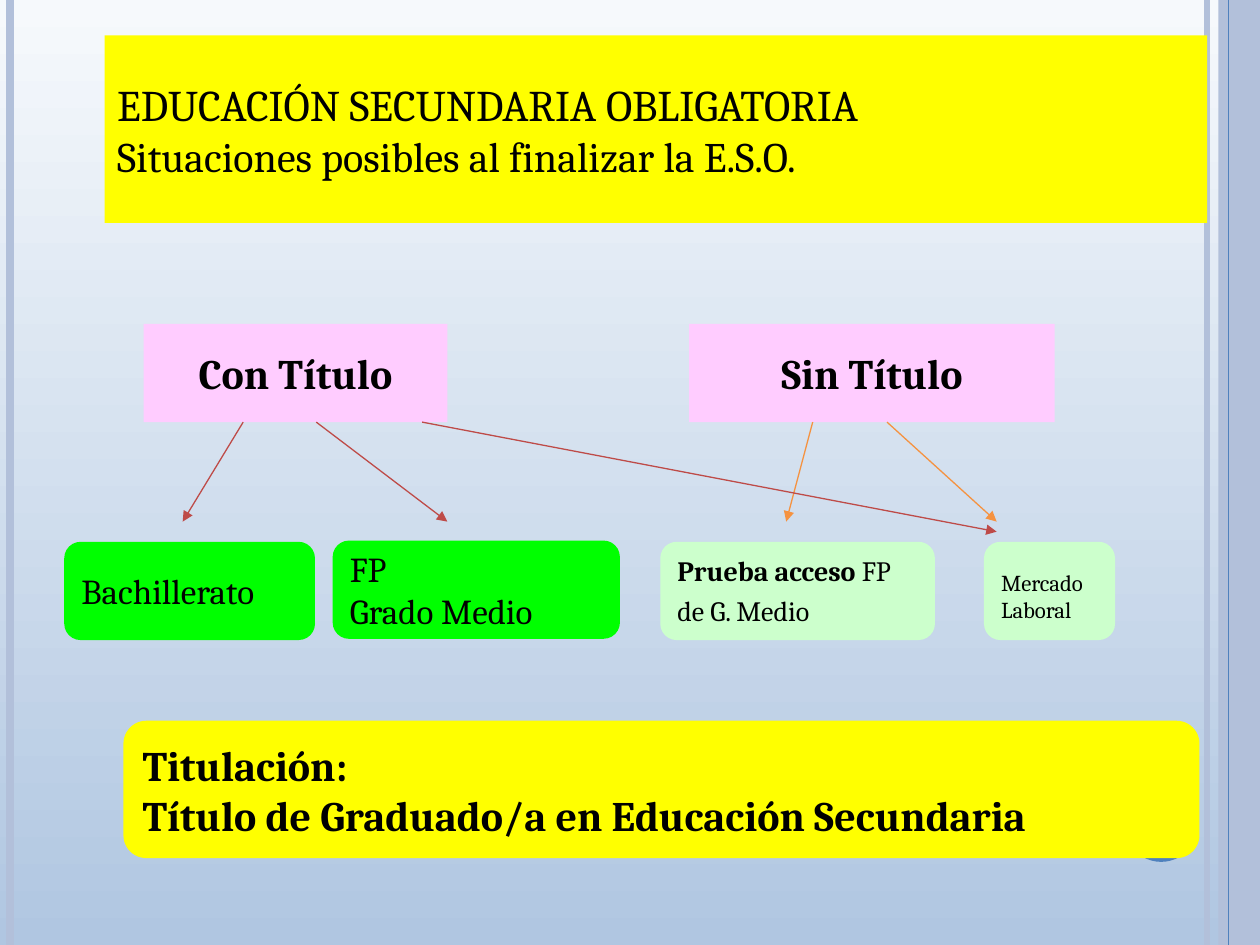
from lxml import etree
from pptx import Presentation
from pptx.dml.color import RGBColor
from pptx.enum.shapes import MSO_CONNECTOR, MSO_SHAPE
from pptx.enum.text import MSO_ANCHOR, MSO_AUTO_SIZE, PP_ALIGN
from pptx.oxml.ns import qn
from pptx.util import Inches, Pt

RECT, ROUNDED, OVAL = MSO_SHAPE.RECTANGLE, MSO_SHAPE.FLOWCHART_ALTERNATE_PROCESS, MSO_SHAPE.OVAL
STRAIGHT = MSO_CONNECTOR.STRAIGHT
LEFT, CENTER = PP_ALIGN.LEFT, PP_ALIGN.CENTER
MIDDLE, NO_AUTOFIT = MSO_ANCHOR.MIDDLE, MSO_AUTO_SIZE.NONE

BLACK = RGBColor(0x00, 0x00, 0x00)
YELLOW = RGBColor(0xFF, 0xFF, 0x00)
PINK = RGBColor(0xFF, 0xCC, 0xFF)
GREEN = RGBColor(0x00, 0xFF, 0x00)
PALE_GREEN = RGBColor(0xCC, 0xFF, 0xCC)
RED = RGBColor(0xBE, 0x4B, 0x48)
ORANGE = RGBColor(0xF5, 0x92, 0x40)
BLUE = RGBColor(0x4F, 0x81, 0xBD)
LIGHT_BLUE = RGBColor(0xB2, 0xC0, 0xDA)
SKY_TOP = RGBColor(0xF6, 0xF9, 0xFC)
SKY_BOTTOM = RGBColor(0xB0, 0xC6, 0xE1)
FONT = "Cambria"


def set_background(s):
    """Fill the slide with a vertical gradient."""
    fill = s.background.fill
    fill.gradient()
    fill.gradient_angle = 270
    for stop, color in zip(fill.gradient_stops, (SKY_TOP, SKY_BOTTOM)):
        stop.color.rgb = color


def add_line(s, start, end, color, width, arrow=False):
    """Draw a straight line, with an optional arrowhead at its end."""
    points = [Inches(v) for v in (*start, *end)]
    line = s.shapes.add_connector(STRAIGHT, *points)
    line.line.color.rgb = color
    line.line.width = Pt(width)
    if arrow:
        etree.SubElement(line.line._get_or_add_ln(), qn("a:tailEnd"), type="triangle")
    etree.SubElement(line._element.spPr, qn("a:effectLst"))


def add_shape(s, kind, box, color):
    """Add a plain filled shape without outline or shadow."""
    sp = s.shapes.add_shape(kind, *[Inches(v) for v in box])
    sp.shadow.inherit = False
    sp.fill.solid()
    sp.fill.fore_color.rgb = color
    sp.line.fill.background()
    return sp


def write(sp, paragraphs, align=LEFT, top=0.05):
    """Write paragraphs of (text, size, bold) runs into a shape."""
    tf = sp.text_frame
    frame = {"word_wrap": True, "auto_size": NO_AUTOFIT, "vertical_anchor": MIDDLE,
             "margin_left": Inches(0.1), "margin_right": Inches(0.1),
             "margin_top": Inches(top), "margin_bottom": Inches(0.05)}
    for name, value in frame.items():
        setattr(tf, name, value)
    for i, runs in enumerate(paragraphs):
        p = tf.add_paragraph() if i else tf.paragraphs[0]
        p.alignment = align
        for text, size, bold in runs:
            r = p.add_run()
            r.text = text
            r.font.color.rgb = BLACK
            for name, value in {"name": FONT, "size": Pt(size), "bold": bold}.items():
                setattr(r.font, name, value)


def add_decoration(s):
    """Draw the side stripes and the disc behind the content."""
    add_shape(s, RECT, (9.67, 0, 0.33, 7.5), LIGHT_BLUE)
    stripes = [(9.58, LIGHT_BLUE, 3), (0.08, LIGHT_BLUE, 4.5), (9.75, BLUE, 0.75)]
    for x, color, width in stripes:
        add_line(s, (x, 0), (x, 7.5), color, width)
    add_shape(s, OVAL, (8.92, 6.25, 0.59, 0.59), BLUE)


def add_title(s):
    """Place the title on its yellow band, above the decoration."""
    title = s.shapes.title
    box = {"left": 0.83, "top": 0.28, "width": 8.75, "height": 1.49}
    for name, value in box.items():
        setattr(title, name, Inches(value))
    title.fill.solid()
    title.fill.fore_color.rgb = YELLOW
    write(title, [[("EDUCACIÓN SECUNDARIA OBLIGATORIA", 25, False)],
                  [("Situaciones posibles al finalizar la E.S.O.", 24, False)]])
    s.shapes._spTree.append(title._element)


def add_outcomes(s):
    """Add the two situations, their options and the arrows between them."""
    for text, x, width in [("Con Título", 1.14, 2.41), ("Sin Título", 5.47, 2.9)]:
        sp = add_shape(s, RECT, (x, 2.57, width, 0.78), PINK)
        write(sp, [[(text, 24, True)]], CENTER)

    options = [
        (0.51, 4.3, 1.99, GREEN, 0.05, [[("Bachillerato", 20, False)]]),
        (2.64, 4.29, 2.28, GREEN, 0.05, [[("FP", 20, False)], [("Grado Medio", 20, False)]]),
        (5.24, 4.3, 2.18, PALE_GREEN, 0.05,
         [[("Prueba acceso ", 16, True), ("FP de G. Medio", 16, False), (" ", 20, False)]]),
        (7.81, 4.3, 1.04, PALE_GREEN, 0.13, [[("Mercado", 13, False)], [("Laboral", 13, False)]]),
    ]
    for x, y, width, color, top, paragraphs in options:
        write(add_shape(s, ROUNDED, (x, y, width, 0.78), color), paragraphs, top=top)

    arrows = [(1.93, 1.45, 4.14, RED), (2.51, 3.55, 4.14, RED), (6.45, 6.24, 4.14, ORANGE),
              (7.04, 7.91, 4.14, ORANGE), (3.35, 7.91, 4.22, RED)]
    for x1, x2, y2, color in arrows:
        add_line(s, (x1, 3.35), (x2, y2), color, 0.75, arrow=True)


def add_qualification(s):
    """Add the closing box with the resulting qualification."""
    sp = add_shape(s, ROUNDED, (0.98, 5.72, 8.54, 1.09), YELLOW)
    write(sp, [[("Titulación:", 24, True)],
               [("Título de Graduado/a en Educación Secundaria", 24, True)]])


def main():
    """Build and save the slide."""
    prs = Presentation()
    prs.slide_width, prs.slide_height = Inches(10), Inches(7.5)
    s = prs.slides.add_slide(prs.slide_layouts[5])
    set_background(s)
    add_decoration(s)
    add_qualification(s)
    add_title(s)
    add_outcomes(s)
    prs.save("out.pptx")


if __name__ == "__main__":
    main()
